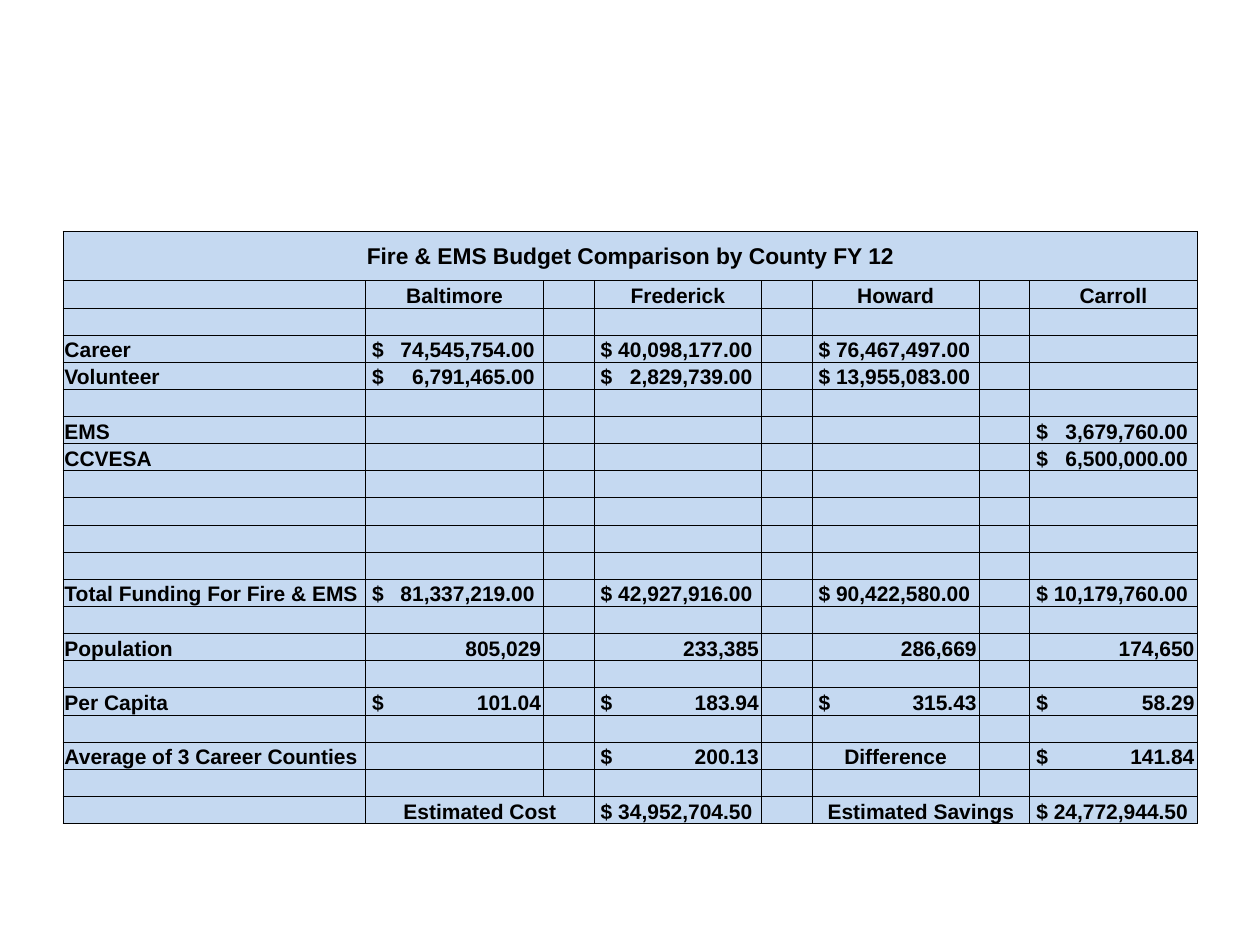
from lxml import etree
from pptx import Presentation
from pptx.dml.color import RGBColor
from pptx.enum.text import MSO_ANCHOR, PP_ALIGN
from pptx.oxml.ns import qn
from pptx.util import Cm, Pt

MIDDLE, BOTTOM = MSO_ANCHOR.MIDDLE, MSO_ANCHOR.BOTTOM
LEFT, CENTER, RIGHT = PP_ALIGN.LEFT, PP_ALIGN.CENTER, PP_ALIGN.RIGHT
BLACK = RGBColor(0x00, 0x00, 0x00)
BLUE = RGBColor(0xC5, 0xD9, 0xF1)

TITLE = "Fire & EMS Budget Comparison by County FY 12"
BLANK = ("",) * 5
# Label, then one value per county
ROWS = [
    ("", "Baltimore", "Frederick", "Howard", "Carroll"),
    BLANK,
    ("Career", "$ 74,545,754.00", "$ 40,098,177.00", "$ 76,467,497.00", ""),
    ("Volunteer", "$ 6,791,465.00", "$ 2,829,739.00", "$ 13,955,083.00", ""),
    BLANK,
    ("EMS", "", "", "", "$ 3,679,760.00"),
    ("CCVESA", "", "", "", "$ 6,500,000.00"),
    BLANK,
    BLANK,
    BLANK,
    BLANK,
    ("Total Funding For Fire & EMS", "$ 81,337,219.00", "$ 42,927,916.00",
     "$ 90,422,580.00", "$ 10,179,760.00"),
    BLANK,
    ("Population", "805,029", "233,385", "286,669", "174,650"),
    BLANK,
    ("Per Capita", "$ 101.04", "$ 183.94", "$ 315.43", "$ 58.29"),
    BLANK,
    ("Average of 3 Career Counties", "", "$ 200.13", "Difference", "$ 141.84"),
    BLANK,
    ("", "Estimated Cost", "$ 34,952,704.50", "Estimated Savings",
     "$ 24,772,944.50"),
]
COLS = (0, 1, 3, 5, 7)  # the columns between are spacers
WIDTHS = (6.1, 3.59, 1.02, 3.37, 1.02, 3.37, 1.02, 3.37)
X, Y, HEIGHT, HEAD = 1.27, 4.66, 11.72, 1
INSET = 0.03
INDENT = 0.13  # before the dollar sign
NEAR, FAR = 0.05, 0.18  # gap after short and long numbers


def style(cell):
    """Give an empty cell its borders, fill, margins and text size."""
    props = cell._tc.get_or_add_tcPr()
    for side in ("lnL", "lnR", "lnT", "lnB"):
        line = etree.SubElement(props, qn(f"a:{side}"), w=str(Pt(0.5)))
        fill = etree.SubElement(line, qn("a:solidFill"))
        etree.SubElement(fill, qn("a:srgbClr"), val=str(BLACK))
    cell.fill.solid()
    cell.fill.fore_color.rgb = BLUE
    cell.margin_left = cell.margin_right = cell.margin_top = Cm(INSET)
    cell.margin_bottom = 0
    cell.vertical_anchor = BOTTOM
    para = cell.text_frame.paragraphs[0]
    etree.SubElement(para._p, qn("a:endParaRPr"), sz="1200")


def write(cell, text, align, size=12):
    para = cell.text_frame.paragraphs[0]
    para.text = text
    para.alignment = align
    for run in para.runs:
        font = run.font
        font.name, font.size, font.bold = "Arial", Pt(size), True
        font.color.rgb = BLACK


def write_money(cell, text, width):
    """Put the dollar sign at the left and the amount on a right tab."""
    amount = text.removeprefix("$ ")
    gap = FAR if len(amount) > 6 else NEAR
    cell.margin_left = Cm(INDENT)
    props = cell.text_frame.paragraphs[0]._p.get_or_add_pPr()
    tabs = etree.SubElement(props, qn("a:tabLst"))
    stop = Cm(width - INDENT - gap)
    etree.SubElement(tabs, qn("a:tab"), pos=str(stop), algn="r")
    write(cell, f"$\t{amount}", LEFT)


def main():
    deck = Presentation()
    deck.slide_width, deck.slide_height = Cm(25.4), Cm(19.05)
    slide = deck.slides.add_slide(deck.slide_layouts[6])
    table = slide.shapes.add_table(
        len(ROWS) + 1, len(WIDTHS),
        Cm(X), Cm(Y), Cm(sum(WIDTHS)), Cm(HEIGHT)).table
    table.first_row = table.horz_banding = False
    for col, width in zip(table.columns, WIDTHS):
        col.width = Cm(width)
    for row in table.rows:
        row.height = Cm((HEIGHT - HEAD) / len(ROWS))
    table.rows[0].height = Cm(HEAD)
    for cell in table.iter_cells():
        style(cell)

    last = len(ROWS)
    for row, first, end in ((0, 0, 7), (last, 1, 2), (last, 5, 6)):
        table.cell(row, first).merge(table.cell(row, end))

    head = table.cell(0, 0)
    head.vertical_anchor = MIDDLE
    write(head, TITLE, CENTER, 13)
    for r, row in enumerate(ROWS, 1):
        for c, text in zip(COLS, row):
            cell = table.cell(r, c)
            if not text:
                continue
            if text.startswith("$"):
                write_money(cell, text, WIDTHS[c])
            elif text[0].isdigit():
                cell.margin_right = Cm(NEAR)
                write(cell, text, RIGHT)
            else:
                write(cell, text, CENTER if c else LEFT)
    deck.save("out.pptx")


if __name__ == "__main__":
    main()
